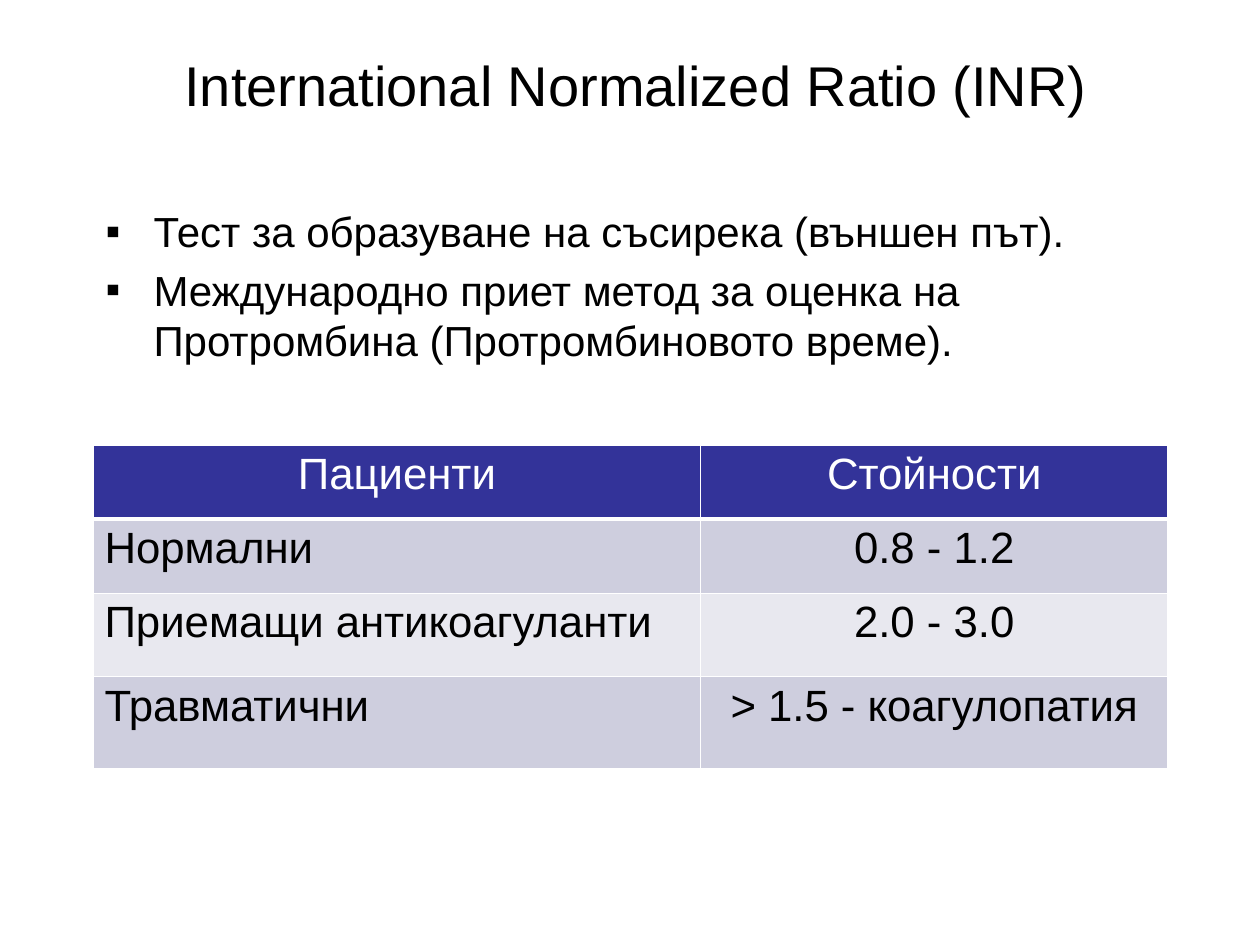
from typing import NamedTuple

from lxml import etree
from pptx import Presentation
from pptx import util as u
from pptx.dml.color import RGBColor
from pptx.enum import text
from pptx.oxml.ns import qn

FONT = "Arial"
BLACK, WHITE, NAVY = "000000", "FFFFFF", "333399"
BANDS = ("CECEDE", "E8E8EF")


class Row(NamedTuple):
    patients: str
    values: str
    height: float


ROWS = (
    Row("Пациенти", "Стойности", 0.59),
    Row("Нормални", "0.8 - 1.2", 0.59),
    Row("Приемащи антикоагуланти", "2.0 - 3.0", 0.66),
    Row("Травматични", "> 1.5 - коагулопатия", 0.73),
)
COLUMN_WIDTHS = (4.82, 3.71)
FINDINGS = (
    "Тест за образуване на съсирека (външен път).",
    "Международно приет метод за оценка на Протромбина (Протромбиновото време).",
)


def color(value: str) -> RGBColor:
    return RGBColor.from_string(value)


def style(paragraph, size: float, ink: str, align=text.PP_ALIGN.LEFT) -> None:
    paragraph.alignment = align
    for run in paragraph.runs:
        run.font.name = FONT
        run.font.size = u.Pt(size)
        run.font.color.rgb = color(ink)


def add_text_frame(slide, left: float, top: float, width: float, height: float):
    frame = slide.shapes.add_textbox(
        u.Inches(left), u.Inches(top), u.Inches(width), u.Inches(height)
    ).text_frame
    frame.word_wrap = True
    return frame


def add_bullet(paragraph) -> None:
    properties = paragraph._p.get_or_add_pPr()
    properties.set("marL", str(u.Inches(0.38)))
    properties.set("indent", str(u.Inches(-0.38)))
    etree.SubElement(properties, qn("a:buFont"), typeface=FONT)
    etree.SubElement(properties, qn("a:buChar"), char="▪")


def set_borders(cell, widths: dict[str, float]) -> None:
    properties = cell._tc.get_or_add_tcPr()
    for side, width in widths.items():
        line = etree.SubElement(properties, qn(f"a:ln{side}"), w=str(u.Pt(width)))
        fill = etree.SubElement(line, qn("a:solidFill"))
        etree.SubElement(fill, qn("a:srgbClr"), val=WHITE)


def add_title(slide) -> None:
    frame = add_text_frame(slide, 0.68, -0.07, 8.74, 1.47)
    frame.vertical_anchor = text.MSO_ANCHOR.MIDDLE
    frame.text = "International Normalized Ratio (INR)"
    style(frame.paragraphs[0], 32, BLACK, text.PP_ALIGN.CENTER)


def add_findings(slide) -> None:
    frame = add_text_frame(slide, 0.74, 1.54, 8.99, 1.99)
    frame.margin_top = u.Inches(0.09)
    frame.text = "\n".join(FINDINGS)
    for index, paragraph in enumerate(frame.paragraphs):
        if index:
            paragraph.space_before = u.Pt(4.8)
        add_bullet(paragraph)
        style(paragraph, 24, BLACK)


def add_ratio_table(slide) -> None:
    table = slide.shapes.add_table(
        len(ROWS), len(COLUMN_WIDTHS), u.Inches(0.74), u.Inches(3.53),
        u.Inches(sum(COLUMN_WIDTHS)), u.Inches(sum(row.height for row in ROWS)),
    ).table
    for column, width in zip(table.columns, COLUMN_WIDTHS):
        column.width = u.Inches(width)
    for row_index, row in enumerate(ROWS):
        table.rows[row_index].height = u.Inches(row.height)
        header = row_index == 0
        for column_index, wording in enumerate((row.patients, row.values)):
            cell = table.cell(row_index, column_index)
            cell.margin_left = cell.margin_right = u.Inches(0.09)
            cell.margin_top = cell.margin_bottom = u.Inches(0.04)
            cell.text_frame.text = wording
            centered = header or column_index == 1
            style(
                cell.text_frame.paragraphs[0], 25, WHITE if header else BLACK,
                text.PP_ALIGN.CENTER if centered else text.PP_ALIGN.LEFT,
            )
            set_borders(cell, {
                "L": 1, "R": 1,
                "T": 3 if row_index == 1 else 1,
                "B": 3 if header else 1,
            })
            cell.fill.solid()
            cell.fill.fore_color.rgb = color(
                NAVY if header else BANDS[(row_index - 1) % 2]
            )


def main() -> None:
    deck = Presentation()
    deck.slide_width, deck.slide_height = u.Inches(10), u.Inches(7.5)
    slide = deck.slides.add_slide(deck.slide_layouts[6])
    add_title(slide)
    add_findings(slide)
    add_ratio_table(slide)
    deck.save("out.pptx")


if __name__ == "__main__":
    main()
